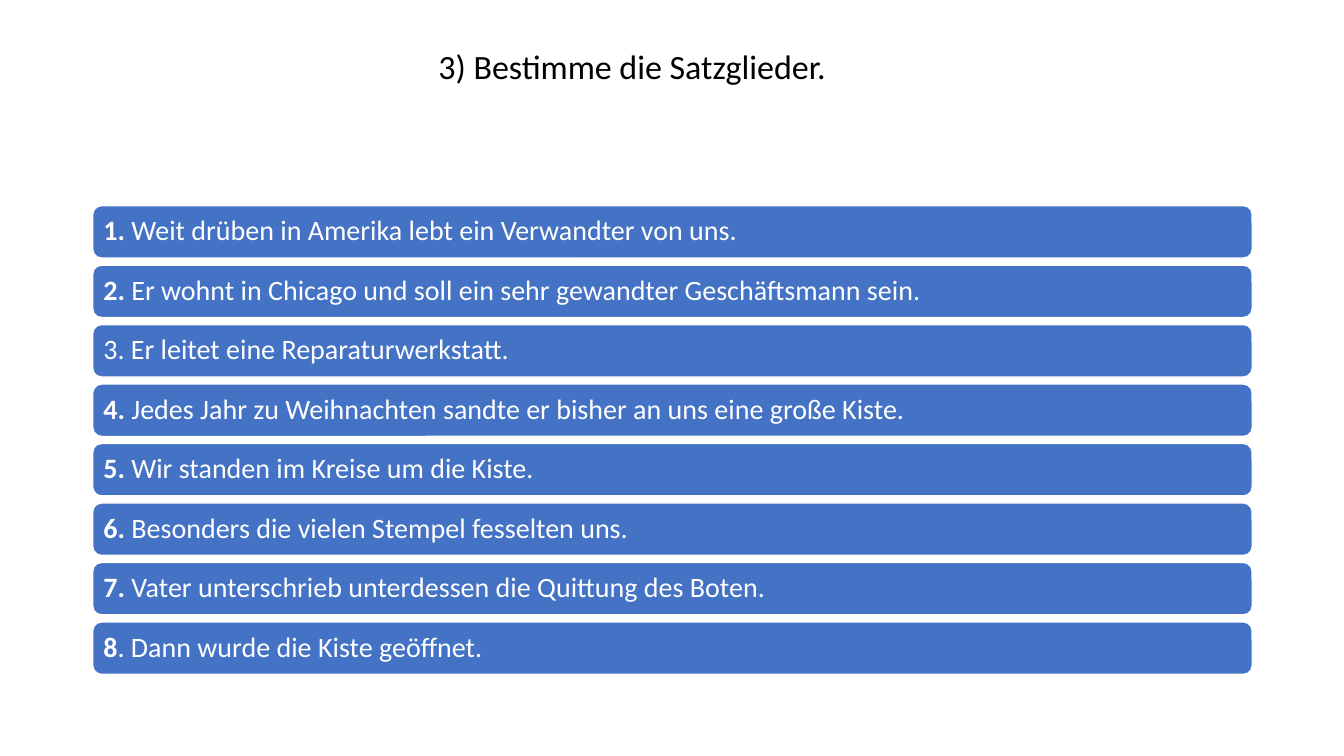
"""Build a German grammar exercise slide with eight numbered sentences in bars."""
from pptx import Presentation
from pptx.dml.color import RGBColor
from pptx.enum.shapes import MSO_SHAPE
from pptx.enum.text import MSO_ANCHOR, PP_ALIGN
from pptx.util import Inches, Pt

ROUNDED = MSO_SHAPE.ROUNDED_RECTANGLE
TOP, MIDDLE = MSO_ANCHOR.TOP, MSO_ANCHOR.MIDDLE
LEFT, CENTER = PP_ALIGN.LEFT, PP_ALIGN.CENTER
TITLE_ONLY = 5

MARGIN, CONTENT_WIDTH = Inches(0.92), Inches(11.5)
FIRST_ROW, ROW_PITCH, BAR_HEIGHT = Inches(2.04), Inches(0.59), Inches(0.52)

SENTENCES = [
    ("1.", " Weit drüben in Amerika lebt ein Verwandter von uns."),
    ("2.", " Er wohnt in Chicago und soll ein sehr gewandter Geschäftsmann sein."),
    ("", "3. Er leitet eine Reparaturwerkstatt."),
    ("4.", " Jedes Jahr zu Weihnachten sandte er bisher an uns eine große Kiste."),
    ("5.", " Wir standen im Kreise um die Kiste."),
    ("6.", " Besonders die vielen Stempel fesselten uns."),
    ("7.", " Vater unterschrieb unterdessen die Quittung des Boten."),
    ("8", ". Dann wurde die Kiste geöffnet."),
]


def color(value):
    return RGBColor.from_string(value)


def write_line(shape, runs, size, text_color, alignment, frame_format):
    frame = shape.text_frame
    for name, value in frame_format.items():
        setattr(frame, name, value)
    paragraph = frame.paragraphs[0]
    paragraph.alignment = alignment
    paragraph.line_spacing = 0.9
    for text, bold in runs:
        if text:
            run = paragraph.add_run()
            run.text = text
            font_format = {"name": "Calibri", "size": Pt(size), "bold": bold}
            for name, value in font_format.items():
                setattr(run.font, name, value)
            run.font.color.rgb = color(text_color)


presentation = Presentation()
presentation.slide_width = Inches(13.33)
presentation.slide_height = Inches(7.5)
slide = presentation.slides.add_slide(presentation.slide_layouts[TITLE_ONLY])

title = slide.shapes.title
title_box = {"left": MARGIN, "top": Inches(0.4),
             "width": CONTENT_WIDTH, "height": Inches(1.45)}
for name, value in title_box.items():
    setattr(title, name, value)
write_line(title, [("3) Bestimme die Satzglieder.", False)], 24.3, "000000", CENTER,
           {"vertical_anchor": TOP, "word_wrap": True, "margin_top": Inches(0.1),
            "margin_left": 0, "margin_right": Inches(0.8)})

for row, (number, sentence) in enumerate(SENTENCES):
    bar = slide.shapes.add_shape(ROUNDED, MARGIN, FIRST_ROW + row * ROW_PITCH,
                                 CONTENT_WIDTH, BAR_HEIGHT)
    bar.shadow.inherit = False
    bar.fill.solid()
    bar.fill.fore_color.rgb = color("4472C4")
    bar.line.color.rgb = color("FFFFFF")
    bar.line.width = Pt(1)
    write_line(bar, [(number, True), (sentence, False)], 20, "FFFFFF", LEFT,
               {"vertical_anchor": MIDDLE, "word_wrap": True,
                "margin_left": Inches(0.08), "margin_right": Inches(0.08)})

presentation.save("out.pptx")
